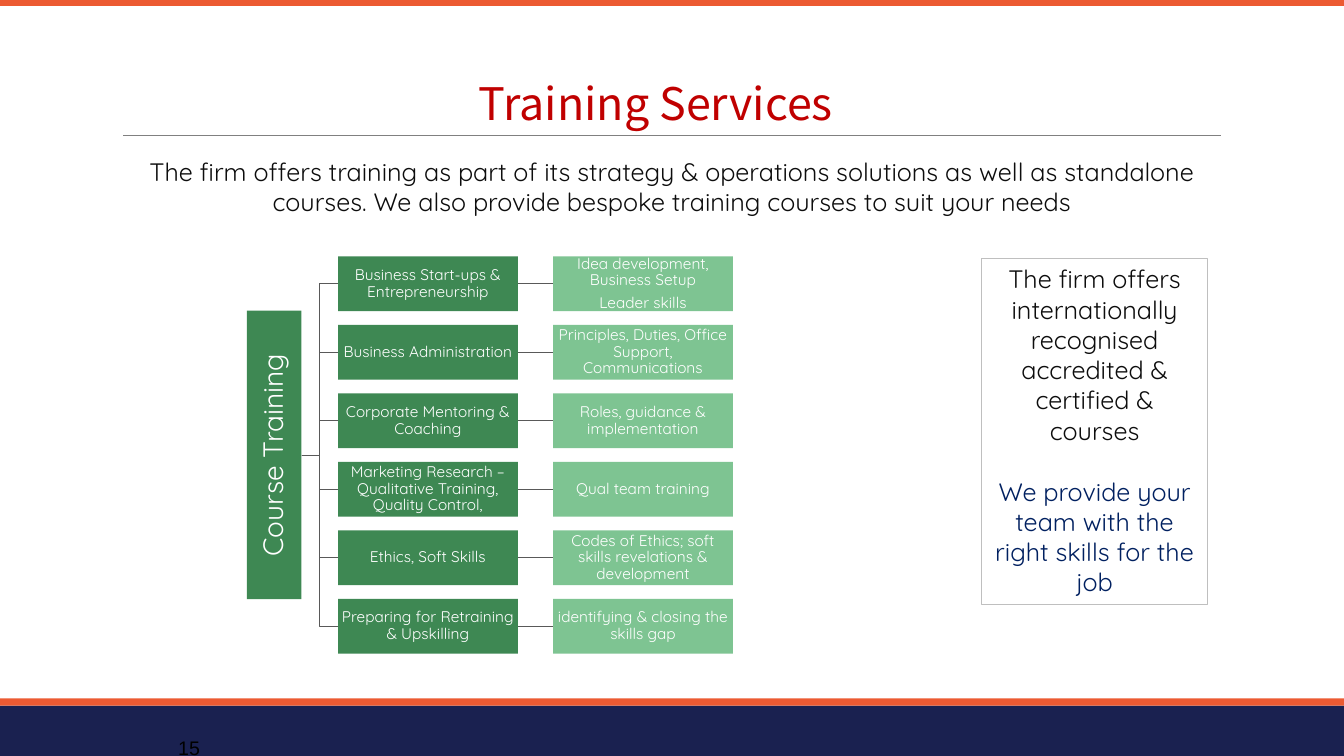
from lxml import etree
from pptx import Presentation
from pptx.dml.color import RGBColor
from pptx.enum.shapes import MSO_CONNECTOR, MSO_SHAPE
from pptx.enum.text import MSO_ANCHOR, MSO_AUTO_SIZE, PP_ALIGN
from pptx.oxml.ns import qn
from pptx.util import Cm, Pt

RECT = MSO_SHAPE.RECTANGLE
STRAIGHT, ELBOW = MSO_CONNECTOR.STRAIGHT, MSO_CONNECTOR.ELBOW
TOP, MIDDLE, BOTTOM = MSO_ANCHOR.TOP, MSO_ANCHOR.MIDDLE, MSO_ANCHOR.BOTTOM
LEFT, CENTER = PP_ALIGN.LEFT, PP_ALIGN.CENTER
NO_FIT = MSO_AUTO_SIZE.NONE

NAVY = RGBColor(0x1A, 0x21, 0x50)
ORANGE = RGBColor(0xEC, 0x5A, 0x32)
GRAY = RGBColor(0x80, 0x80, 0x80)
DARK = RGBColor(0x59, 0x59, 0x59)
SILVER = RGBColor(0xBF, 0xBF, 0xBF)
GREEN = RGBColor(0x3E, 0x88, 0x53)
MINT = RGBColor(0x7E, 0xC4, 0x92)
RED = RGBColor(0xC0, 0x00, 0x00)
BLUE = RGBColor(0x00, 0x20, 0x60)
INK = RGBColor(0x0D, 0x0D, 0x0D)
BLACK = RGBColor(0x00, 0x00, 0x00)
WHITE = RGBColor(0xFF, 0xFF, 0xFF)

SANS = "Quicksand"
HEAD = {"name": "Noto Sans CJK TC", "size": Pt(32), "color": RED}
BODY = {"name": SANS, "size": Pt(18), "color": INK}
PITCH = {**BODY, "color": BLUE}
ROOT = {"name": SANS, "size": Pt(20), "color": WHITE}
NODE = {"name": SANS, "size": Pt(11), "color": WHITE}
PAGE = {"name": "Arial", "size": Pt(14), "color": BLACK}

COURSES = [
    ("Business Start-ups & Entrepreneurship",
     ["Idea development, Business Setup", "Leader skills"]),
    ("Business Administration",
     ["Principles, Duties, Office Support, Communications"]),
    ("Corporate Mentoring & Coaching",
     ["Roles, guidance & implementation"]),
    ("Marketing Research – Qualitative Training, Quality Control,",
     ["Qual team training"]),
    ("Ethics, Soft Skills",
     ["Codes of Ethics; soft skills revelations & development"]),
    ("Preparing for Retraining & Upskilling",
     ["identifying & closing the skills gap"]),
]


def place(shape, box):
    for key, val in zip(("left", "top", "width", "height"), box):
        setattr(shape, key, Cm(val))


def write(shape, lines, anchor=TOP, inset=None, **form):
    frame = shape.text_frame
    look = {"word_wrap": True, "auto_size": NO_FIT, "vertical_anchor": anchor}
    if inset is not None:
        for side in ("left", "top", "right", "bottom"):
            look["margin_" + side] = Cm(inset)
    for key, val in look.items():
        setattr(frame, key, val)
    for num, (text, font, extra) in enumerate(lines):
        para = frame.add_paragraph() if num else frame.paragraphs[0]
        for key, val in {"alignment": CENTER, **form, **extra}.items():
            setattr(para, key, val)
        run = para.add_run()
        run.text = text
        for key, val in font.items():
            if key == "color":
                run.font.color.rgb = val
            else:
                setattr(run.font, key, val)


def block(slide, box, fill=None, line=None):
    shape = slide.shapes.add_shape(RECT, *map(Cm, box))
    shape.shadow.inherit = False
    if fill is None:
        shape.fill.background()
    else:
        shape.fill.solid()
        shape.fill.fore_color.rgb = fill
    if line is None:
        shape.line.fill.background()
    else:
        shape.line.color.rgb = line
        shape.line.width = Pt(0.5)
    return shape


def wire(slide, kind, color, ends=(0, 0, 0, 0)):
    link = slide.shapes.add_connector(kind, *map(Cm, ends))
    link.line.color.rgb = color
    link.line.width = Pt(0.5)
    etree.SubElement(link.element.spPr, qn("a:effectLst"))
    return link


def join(slide, kind, start, end):
    link = wire(slide, kind, DARK)
    link.begin_connect(start, 3)
    link.end_connect(end, 1)


def label(slide, box, text, font, align):
    shape = slide.shapes.add_textbox(*map(Cm, box))
    write(shape, [(text, font, {})], alignment=align)


def draw_frame(slide, box):
    left, top, width, height = box
    foot, band = 1.27, 0.18
    base = top + height - foot
    block(slide, (left, base, width, foot), NAVY)
    block(slide, (left, base - band, width, band), ORANGE)
    block(slide, (left, top - 0.03, width, band), ORANGE)
    label(slide, (left + 4.24, base + 0.64, 1.07, 0.86), "15", PAGE, LEFT)


def draw_head(slide, box):
    left, top, width, height = box
    title = slide.shapes.title
    place(title, (left + 2.64, top, 21.59, height))
    write(title, [("Training Services", HEAD, {})], BOTTOM, line_spacing=0.85)
    title.text_frame.paragraphs[0].runs[0].font.element.set("spc", "-50") \
        if hasattr(title.text_frame.paragraphs[0].runs[0].font, "element") else None
    base = top + height
    wire(slide, STRAIGHT, GRAY, (left, base, left + width, base))


def draw_tree(slide, box):
    left, top, width, height = box
    wide, high, gap = 4.53, 1.38, 0.92
    step = (height - high) / (len(COURSES) - 1)
    tall = 7.27
    form = {"anchor": MIDDLE, "inset": 0.03, "line_spacing": 0.9}
    root = block(slide, (left, top + (height - tall) / 2, high, tall), GREEN)
    write(root, [("Course Training", ROOT, {})], **form)
    root.element.txBody.find(qn("a:bodyPr")).set("vert", "vert270")
    near = left + high + gap
    far = left + width - wide
    for row, (name, topics) in enumerate(COURSES):
        y = top + row * step
        course = block(slide, (near, y, wide, high), GREEN)
        write(course, [(name, NODE, {})], **form)
        detail = block(slide, (far, y, wide, high), MINT)
        lines = [(text, NODE, {"space_before": Pt(4)} if num else {})
                 for num, text in enumerate(topics)]
        write(detail, lines, **form)
        join(slide, ELBOW, root, course)
        join(slide, STRAIGHT, course, detail)


def draw_card(slide, box):
    card = block(slide, box, line=SILVER)
    write(card, [
        ("The firm offers internationally recognised accredited & certified & courses",
         BODY, {}),
        ("We provide your team with the right skills for the job",
         PITCH, {"space_before": Pt(22)}),
    ])


def main():
    deck = Presentation()
    deck.slide_width, deck.slide_height = Cm(33.87), Cm(19.05)
    slide = deck.slides.add_slide(deck.slide_layouts[5])
    draw_frame(slide, (0, 0, 33.87, 19.05))
    draw_head(slide, (3.1, 0.43, 27.68, 2.97))
    label(slide, (3.2, 3.81, 27.46, 1.8),
          "The firm offers training as part of its strategy & operations solutions "
          "as well as standalone courses. We also provide bespoke training "
          "courses to suit your needs", BODY, CENTER)
    draw_tree(slide, (6.22, 6.46, 12.25, 10.01))
    draw_card(slide, (24.74, 6.52, 5.69, 8.71))
    deck.save("out.pptx")


if __name__ == "__main__":
    main()
